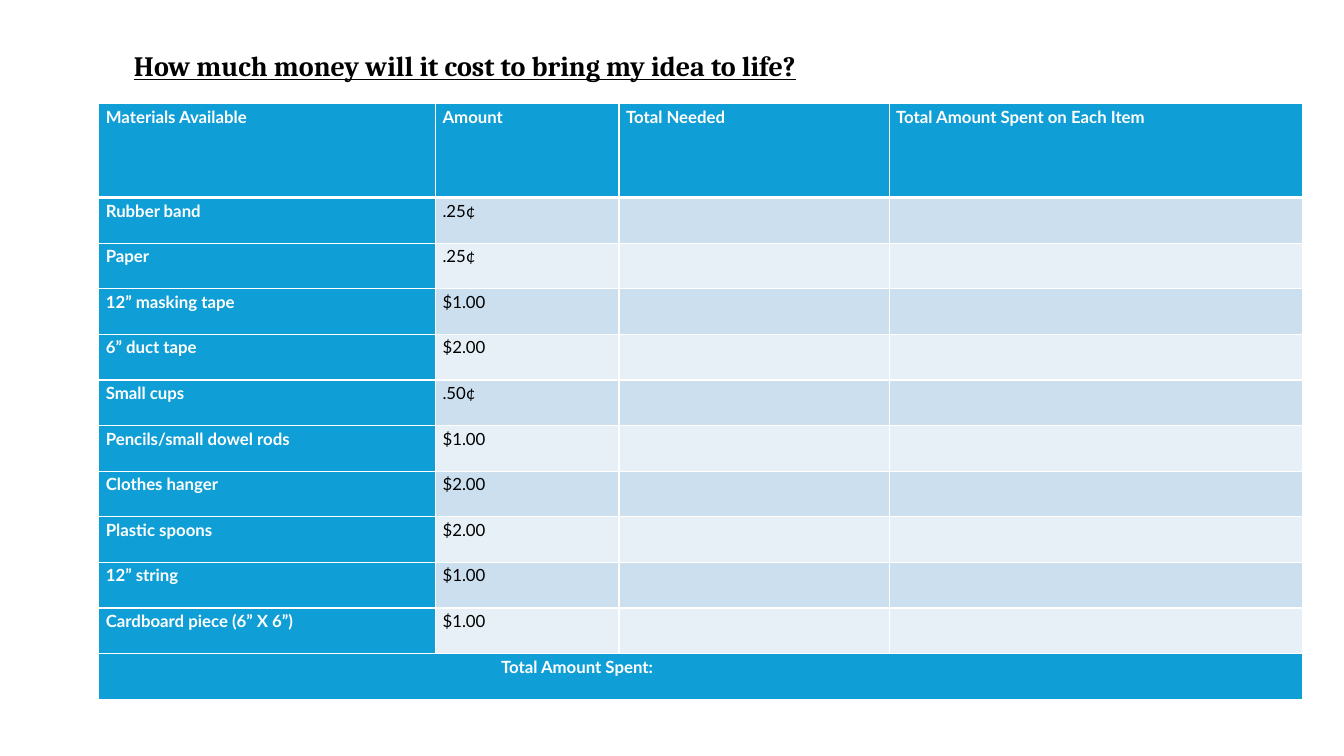
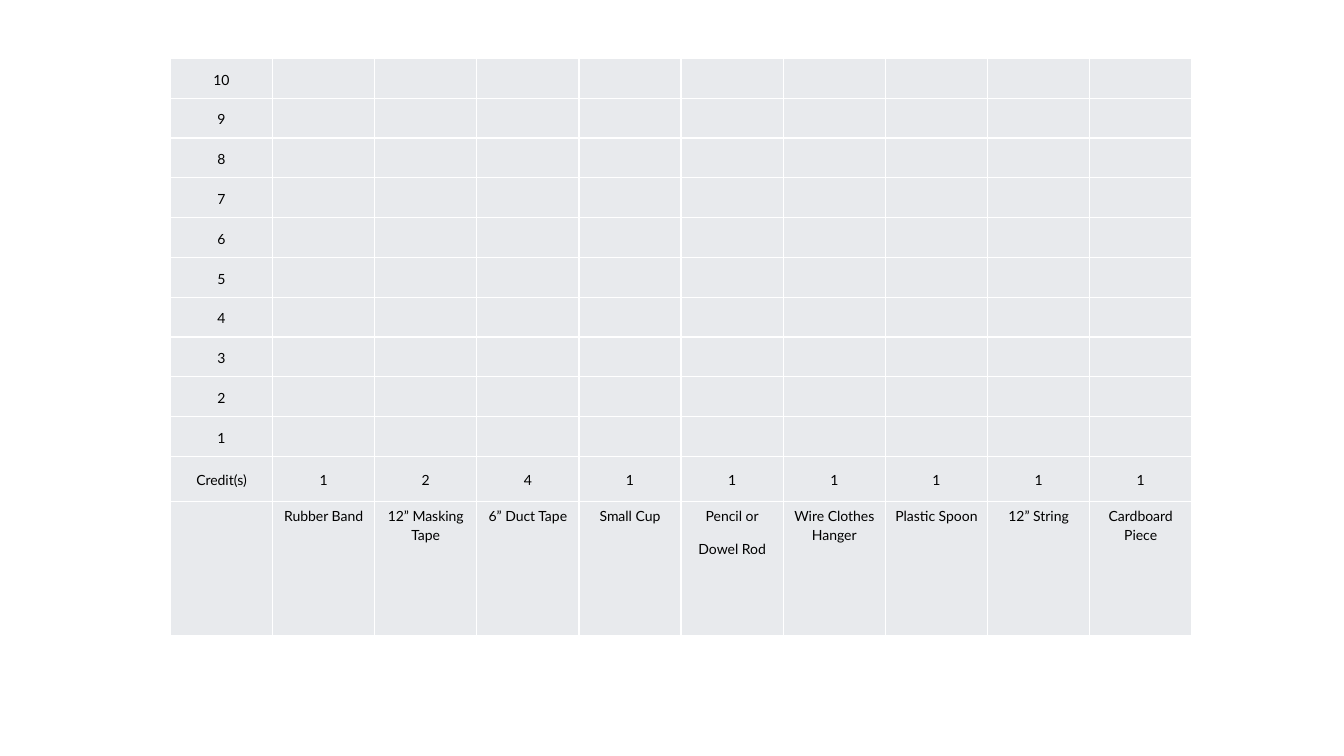
from dataclasses import dataclass

from lxml.etree import SubElement
from pptx import Presentation
from pptx.dml.color import RGBColor
from pptx.enum.text import MSO_ANCHOR, PP_ALIGN
from pptx.oxml.ns import qn
from pptx.util import Inches, Pt


@dataclass(frozen=True)
class Theme:
    blue: str = "0F9ED5"
    dark: str = "CCDFEF"
    light: str = "E7F0F7"
    gray: str = "E8EAED"
    white: str = "FFFFFF"
    black: str = "000000"
    serif: str = "Cambria"
    sans: str = "Lato"
    title: int = 20
    body: int = 12
    small: int = 10
    thin: int = 1
    thick: int = 3


class Deck:
    """Hold the theme and the current slide, and draw each kind of element."""

    def __init__(self, theme):
        self.theme = theme
        self.file = Presentation()
        self.file.slide_width = Inches(13.33)
        self.file.slide_height = Inches(7.5)
        self.slide = None

    def page(self):
        self.slide = self.file.slides.add_slide(self.file.slide_layouts[6])

    def put(self, thing, form):
        for name, value in form.items():
            setattr(thing, name, value)

    def label(self, frame, text, font, color, form=None):
        for at, line in enumerate(text.split("\n")):
            para = frame.add_paragraph() if at else frame.paragraphs[0]
            self.put(para, form or {})
            run = para.add_run()
            run.text = line
            self.put(run.font, font)
            run.font.color.rgb = RGBColor.from_string(color)

    def title(self, text, left, top, width, height):
        box = self.slide.shapes.add_textbox(*map(Inches, (left, top, width, height)))
        frame = box.text_frame
        self.put(frame, {"word_wrap": False, "vertical_anchor": MSO_ANCHOR.MIDDLE})
        font = {"name": self.theme.serif, "size": Pt(self.theme.title),
                "bold": True, "underline": True}
        self.label(frame, text, font, self.theme.black)

    def table(self, left, top, wide, high):
        box = map(Inches, (left, top, sum(wide), sum(high)))
        grid = self.slide.shapes.add_table(len(high), len(wide), *box).table
        self.put(grid, {"first_row": False, "horz_banding": False})
        for col, width in zip(grid.columns, wide):
            col.width = Inches(width)
        for row, height in zip(grid.rows, high):
            row.height = Inches(height)
        return grid

    def edge(self, cell, **thick):
        props = cell._tc.get_or_add_tcPr()
        for side in "LRTB":
            width = thick.get(side, self.theme.thin)
            line = SubElement(props, qn(f"a:ln{side}"), w=str(Pt(width)))
            fill = SubElement(line, qn("a:solidFill"))
            SubElement(fill, qn("a:srgbClr"), val=self.theme.white)

    def cell(self, cell, text, fill, size, color=None, bold=False,
             inset=(0.07, 0), center=False, middle=False, edges=None):
        self.edge(cell, **(edges or {}))
        cell.fill.solid()
        cell.fill.fore_color.rgb = RGBColor.from_string(fill)
        side, end = map(Inches, inset if text else (0, 0))
        self.put(cell, {
            "margin_left": side, "margin_right": side,
            "margin_top": end, "margin_bottom": end,
            "vertical_anchor": MSO_ANCHOR.MIDDLE if middle else MSO_ANCHOR.TOP,
        })
        if text:
            font = {"name": self.theme.sans, "size": Pt(size), "bold": bold}
            form = {"alignment": PP_ALIGN.CENTER if center else PP_ALIGN.LEFT,
                    "line_spacing": 1.15, "space_after": Pt(10)}
            self.label(cell.text_frame, text, font, color or self.theme.black, form)


HEADS = ["Materials Available", "Amount", "Total Needed",
         "Total Amount Spent on Each Item"]
COSTS = [
    ("Rubber band", ".25¢"),
    ("Paper", ".25¢"),
    ("12” masking tape", "$1.00"),
    ("6” duct tape", "$2.00"),
    ("Small cups", ".50¢"),
    ("Pencils/small dowel rods", "$1.00"),
    ("Clothes hanger", "$2.00"),
    ("Plastic spoons", "$2.00"),
    ("12” string", "$1.00"),
    ("Cardboard piece (6” X 6”)", "$1.00"),
]
ITEMS = [
    ("Rubber Band", 1),
    ("12” Masking Tape", 2),
    ("6” Duct Tape", 4),
    ("Small Cup", 1),
    ("Pencil or\nDowel Rod", 1),
    ("Wire Clothes Hanger", 1),
    ("Plastic Spoon", 1),
    ("12” String", 1),
    ("Cardboard Piece", 1),
]


def costs(deck):
    look = deck.theme
    deck.page()
    rows = [HEADS, *([*cost, "", ""] for cost in COSTS),
            ["Total Amount Spent:", "", "", ""]]
    last = len(rows) - 1
    grid = deck.table(0.98, 1.03, [3.34, 1.82, 2.68, 3.19],
                      [0.93] + [(5.91 - 0.93) / last] * last)
    grid.cell(last, 0).merge(grid.cell(last, 3))
    rule = {0: {"B": look.thick}, 1: {"T": look.thick}}
    for y, row in enumerate(rows):
        for x, text in enumerate(row):
            key = y in (0, last) or x == 0
            band = look.dark if y % 2 else look.light
            deck.cell(grid.cell(y, x), text, look.blue if key else band, look.body,
                      look.white if key else look.black, key, edges=rule.get(y))
    grid.cell(last, 0).margin_left = Inches(3.99)
    deck.title("How much money will it cost to bring my idea to life?",
               1.23, 0.41, 6.93, 0.48)


def credits(deck):
    look = deck.theme
    deck.page()
    names, points = zip(*ITEMS)
    top = 10
    rows = [[str(n)] + [""] * len(ITEMS) for n in range(top, 0, -1)]
    rows += [["Credit(s)", *map(str, points)], ["", *names]]
    grid = deck.table(1.69, 0.58, [10.13 / len(rows[0])] * len(rows[0]),
                      [(5.73 - 0.45 - 1.33) / top] * top + [0.45, 1.33])
    pads = [0.05] * top + [0.07, 0.03]
    for y, (row, pad) in enumerate(zip(rows, pads)):
        for x, text in enumerate(row):
            deck.cell(grid.cell(y, x), text, look.gray, look.small,
                      inset=(pad, pad), center=True, middle=y <= top)


def main():
    deck = Deck(Theme())
    costs(deck)
    credits(deck)
    deck.file.save("out.pptx")


if __name__ == "__main__":
    main()
